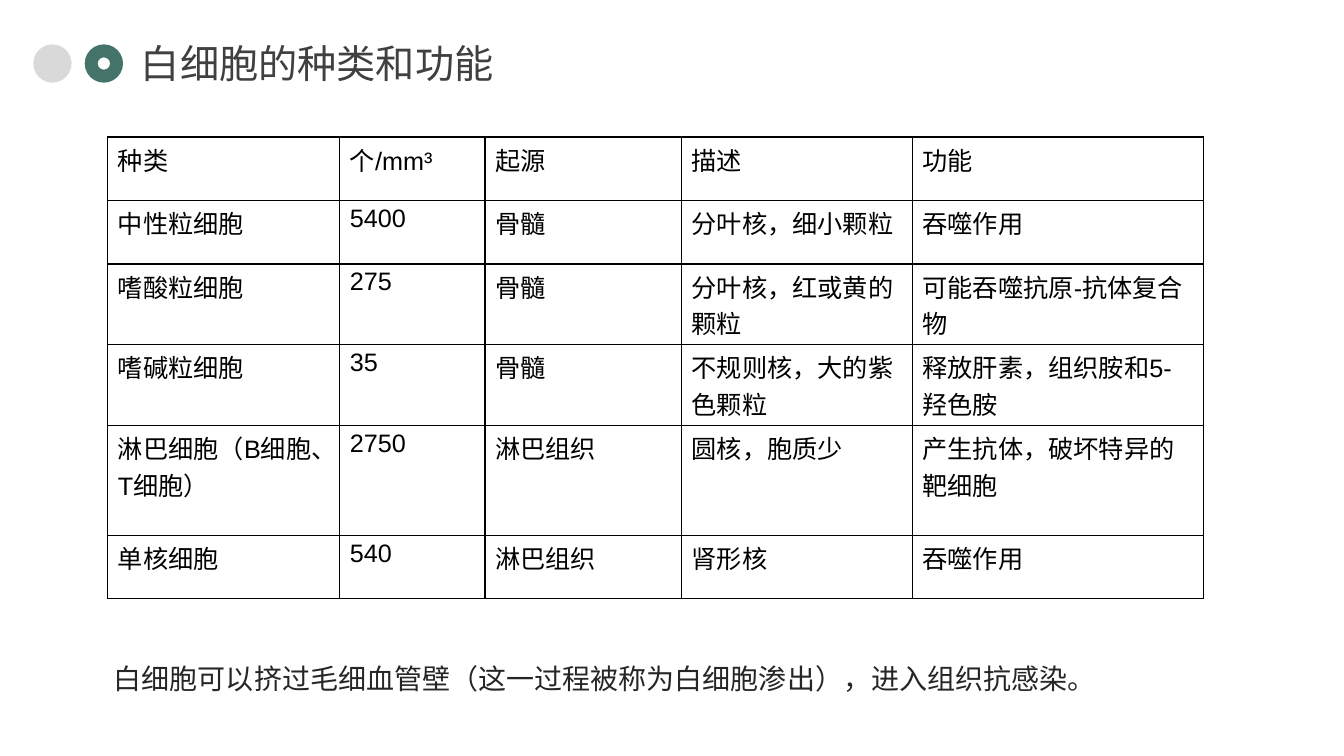
from dataclasses import dataclass

from lxml.etree import SubElement
from pptx import Presentation
from pptx.dml.color import RGBColor
from pptx.enum.shapes import MSO_SHAPE
from pptx.enum.text import MSO_ANCHOR, MSO_AUTO_SIZE, PP_ALIGN
from pptx.oxml.ns import qn
from pptx.util import Inches, Pt


@dataclass(frozen=True)
class Theme:
    font: str = "Arial"
    grey: str = "D9D9D9"
    green: str = "447469"
    title: str = "404040"
    note: str = "262626"
    ink: str = "000000"
    title_size: int = 28
    note_size: int = 20
    cell_size: int = 18
    border: int = 1


@dataclass(frozen=True)
class Marker:
    left: float
    kind: MSO_SHAPE
    color: str
    adjustments: tuple = ()


@dataclass(frozen=True)
class Label:
    box: tuple
    text: str
    size: int
    color: str
    paragraph: dict


THEME = Theme()

MARKERS = [
    Marker(0.33, MSO_SHAPE.OVAL, THEME.grey),
    Marker(0.84, MSO_SHAPE.DONUT, THEME.green, (0.338,)),
]

LABELS = [
    Label((1.3, 0.34, 4.11, 0.57), "白细胞的种类和功能",
          THEME.title_size, THEME.title, {"alignment": PP_ALIGN.JUSTIFY}),
    Label((1.03, 6.38, 11.81, 0.54),
          "白细胞可以挤过毛细血管壁（这一过程被称为白细胞渗出），进入组织抗感染。",
          THEME.note_size, THEME.note, {"line_spacing": 1.5}),
]

COL_WIDTHS = [2.3, 1.44, 1.95, 2.29, 2.89]
ROW_HEIGHTS = [0.63, 0.63, 0.8, 0.8, 1.09, 0.63]
CELLS = [
    ("种类", "个/mm³", "起源", "描述", "功能"),
    ("中性粒细胞", "5400", "骨髓", "分叶核，细小颗粒", "吞噬作用"),
    ("嗜酸粒细胞", "275", "骨髓", "分叶核，红或黄的颗粒", "可能吞噬抗原-抗体复合物"),
    ("嗜碱粒细胞", "35", "骨髓", "不规则核，大的紫色颗粒", "释放肝素，组织胺和5-羟色胺"),
    ("淋巴细胞（B细胞、T细胞）", "2750", "淋巴组织", "圆核，胞质少",
     "产生抗体，破坏特异的靶细胞"),
    ("单核细胞", "540", "淋巴组织", "肾形核", "吞噬作用"),
]


def apply_format(target, values: dict) -> None:
    for name, value in values.items():
        setattr(target, name, value)


def write_text(p, text: str, size: int, color: str) -> None:
    r = p.add_run()
    r.text = text
    apply_format(r.font, {"name": THEME.font, "size": Pt(size)})
    r.font.color.rgb = RGBColor.from_string(color)


def add_marker(s, marker: Marker) -> None:
    sp = s.shapes.add_shape(marker.kind, Inches(marker.left), Inches(0.44),
                            Inches(0.38), Inches(0.38))
    for i, value in enumerate(marker.adjustments):
        sp.adjustments[i] = value
    sp.shadow.inherit = False
    sp.fill.solid()
    sp.fill.fore_color.rgb = RGBColor.from_string(marker.color)
    sp.line.fill.background()


def add_label(s, label: Label) -> None:
    tf = s.shapes.add_textbox(*map(Inches, label.box)).text_frame
    apply_format(tf, {"word_wrap": True,
                      "auto_size": MSO_AUTO_SIZE.SHAPE_TO_FIT_TEXT,
                      "vertical_anchor": MSO_ANCHOR.MIDDLE})
    p = tf.paragraphs[0]
    apply_format(p, label.paragraph)
    write_text(p, label.text, label.size, label.color)


def add_borders(cell) -> None:
    props = cell._tc.get_or_add_tcPr()
    for side in ("lnL", "lnR", "lnT", "lnB"):
        line = SubElement(props, qn(f"a:{side}"), w=str(Pt(THEME.border)))
        fill = SubElement(line, qn("a:solidFill"))
        SubElement(fill, qn("a:srgbClr"), val=THEME.ink)


def add_cell_table(s) -> None:
    table = s.shapes.add_table(
        len(CELLS), len(COL_WIDTHS), Inches(1.07), Inches(1.36),
        Inches(sum(COL_WIDTHS)), Inches(sum(ROW_HEIGHTS))).table
    apply_format(table, {"first_row": False, "horz_banding": False})
    for column, width in zip(table.columns, COL_WIDTHS):
        column.width = Inches(width)
    for row, height, texts in zip(table.rows, ROW_HEIGHTS, CELLS):
        row.height = Inches(height)
        for cell, text in zip(row.cells, texts):
            apply_format(cell, {"margin_top": Inches(0.04),
                                "margin_bottom": Inches(0.04)})
            add_borders(cell)
            cell.fill.background()
            write_text(cell.text_frame.paragraphs[0], text,
                       THEME.cell_size, THEME.ink)


def main() -> None:
    prs = Presentation()
    apply_format(prs, {"slide_width": Inches(13.33), "slide_height": Inches(7.5)})
    s = prs.slides.add_slide(prs.slide_layouts[6])

    # Heading markers
    for marker in MARKERS:
        add_marker(s, marker)

    # Title and closing note
    for label in LABELS:
        add_label(s, label)

    # White blood cell table
    add_cell_table(s)

    prs.save("out.pptx")


if __name__ == "__main__":
    main()
